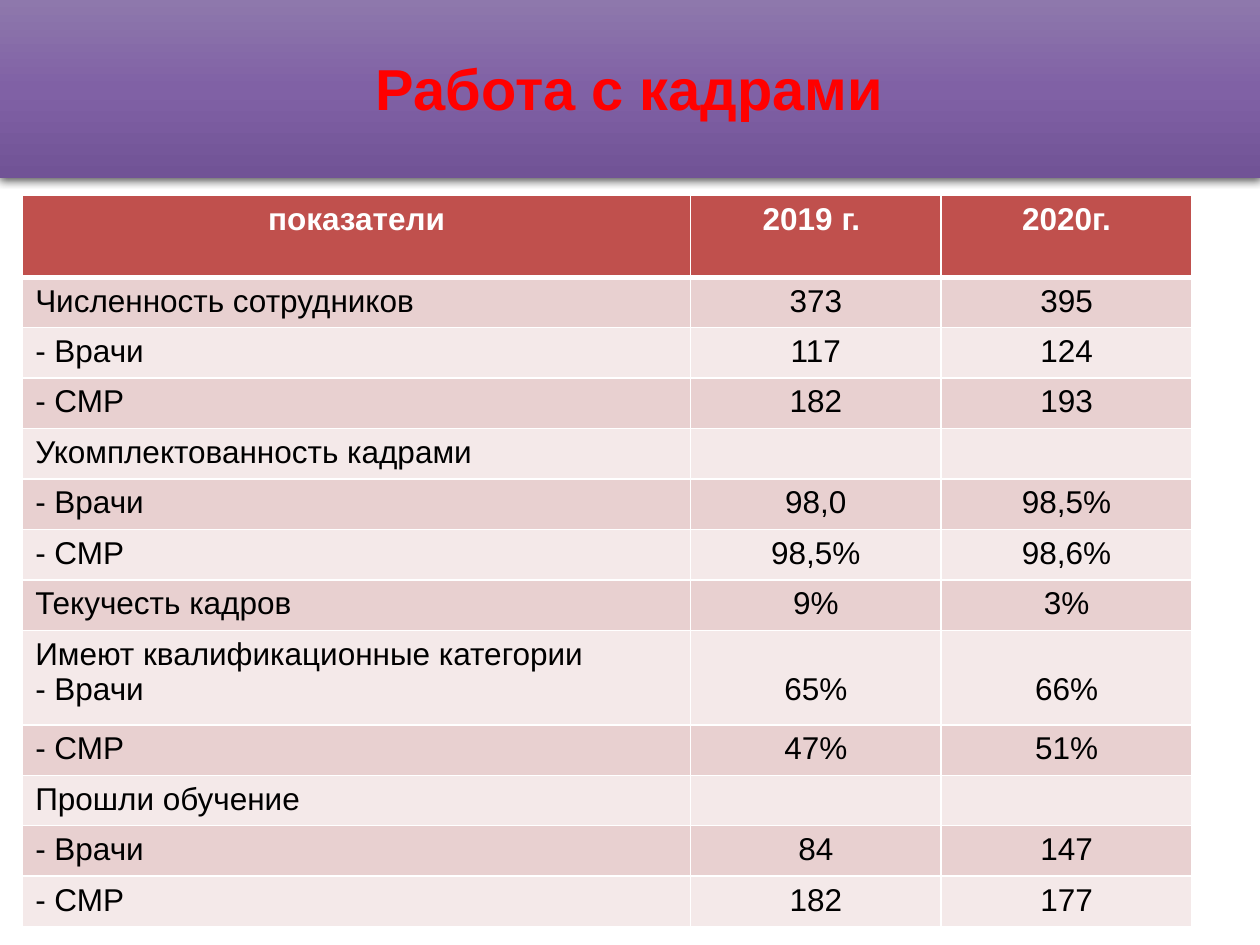
from lxml.etree import SubElement
from pptx import Presentation
from pptx.dml.color import RGBColor
from pptx.enum.shapes import MSO_SHAPE as Shape
from pptx.enum.text import MSO_ANCHOR as Anchor, PP_ALIGN as Align
from pptx.oxml.ns import qn
from pptx.util import Inches, Pt


def color(value):
    return RGBColor.from_string(value)


def add_node(parent, tag, **values):
    return SubElement(parent, qn(tag), {key: str(value) for key, value in values.items()})


TITLE_FONT = {"name": "Arial", "size": Pt(33), "bold": True}
HEADER_FONT = {"name": "Arial", "size": Pt(18), "bold": True}
BODY_FONT = {"name": "Arial", "size": Pt(18), "bold": False}
ROWS = [
    ("показатели", "2019 г. ", "2020г."),
    ("Численность сотрудников", "373", "395"),
    ("- Врачи", "117", "124"),
    ("- СМР", "182", "193"),
    ("Укомплектованность кадрами", "", ""),
    ("- Врачи", "98,0", "98,5%"),
    ("- СМР", "98,5%", "98,6%"),
    ("Текучесть кадров", "9%", "3%"),
    ("Имеют квалификационные категории\n- Врачи", "65%", "66%"),
    ("- СМР", "47%", "51%"),
    ("Прошли обучение", "", ""),
    ("- Врачи", "84", "147"),
    ("- СМР", "182", "177"),
]
HEADER_ROW, CATEGORY_ROW = 0, 8

deck = Presentation()
deck.slide_width, deck.slide_height = Inches(10), Inches(7.5)
page = deck.slides.add_slide(deck.slide_layouts[6])

band = page.shapes.add_shape(Shape.RECTANGLE, 0, 0, Inches(10), Inches(1.41))
band.line.fill.background()
band.fill.gradient()
band.fill.gradient_angle = 270
stops = band.fill._fill._gradFill.find(qn("a:gsLst"))
stops.clear()
for position, shade in ((0, "8E78AC"), (50, "8061A5"), (100, "715396")):
    stop = add_node(stops, "a:gs", pos=position * 1000)
    add_node(stop, "a:srgbClr", val=shade)
band.shadow.inherit = False
effects = band._element.spPr.find(qn("a:effectLst"))
shadow = add_node(effects, "a:outerShdw", blurRad=Pt(4.5), dist=Pt(1.5), dir=90 * 60000, rotWithShape=0)
shade = add_node(shadow, "a:srgbClr", val="000000")
add_node(shade, "a:alpha", val=63000)

title = page.shapes.add_textbox(Inches(0.75), Inches(0.13), Inches(8.62), Inches(1.2))
title.text_frame.word_wrap = True
title.text_frame.vertical_anchor = Anchor.MIDDLE
para = title.text_frame.paragraphs[0]
para.alignment = Align.CENTER
para.line_spacing = 0.9
span = para.add_run()
span.text = "Работа с кадрами "
span.font.color.rgb = color("FF0000")
for name, value in TITLE_FONT.items():
    setattr(span.font, name, value)

heights = [0.38] * len(ROWS)
heights[HEADER_ROW], heights[CATEGORY_ROW] = 0.65, 0.75
frame = page.shapes.add_table(
    len(ROWS), 3, Inches(0.18), Inches(1.55), Inches(9.28), Inches(sum(heights))
)
table = frame.table
for column, width in zip(table.columns, (5.3, 1.99, 1.99)):
    column.width = Inches(width)

for row_index, texts in enumerate(ROWS):
    table.rows[row_index].height = Inches(heights[row_index])
    is_header = row_index == HEADER_ROW
    fill = "C0504D" if is_header else ("F4E9E9", "E8D0D0")[row_index % 2]
    for column_index, text in enumerate(texts):
        cell = table.cell(row_index, column_index)
        cell.text = text
        if row_index == CATEGORY_ROW and column_index:
            cell.vertical_anchor = Anchor.BOTTOM
            cell.margin_bottom = Inches(0.14)
        for para in cell.text_frame.paragraphs:
            para.alignment = Align.CENTER if is_header or column_index else Align.LEFT
            for span in para.runs:
                span.font.color.rgb = color("FFFFFF" if is_header else "000000")
                for name, value in (HEADER_FONT if is_header else BODY_FONT).items():
                    setattr(span.font, name, value)
        properties = cell._tc.get_or_add_tcPr()
        for side in "LRTB":
            thick = (is_header and side == "B") or (row_index == 1 and side == "T")
            border = add_node(properties, f"a:ln{side}", w=Pt(3 if thick else 1))
            add_node(add_node(border, "a:solidFill"), "a:srgbClr", val="FFFFFF")
        cell.fill.solid()
        cell.fill.fore_color.rgb = color(fill)

deck.save("out.pptx")
